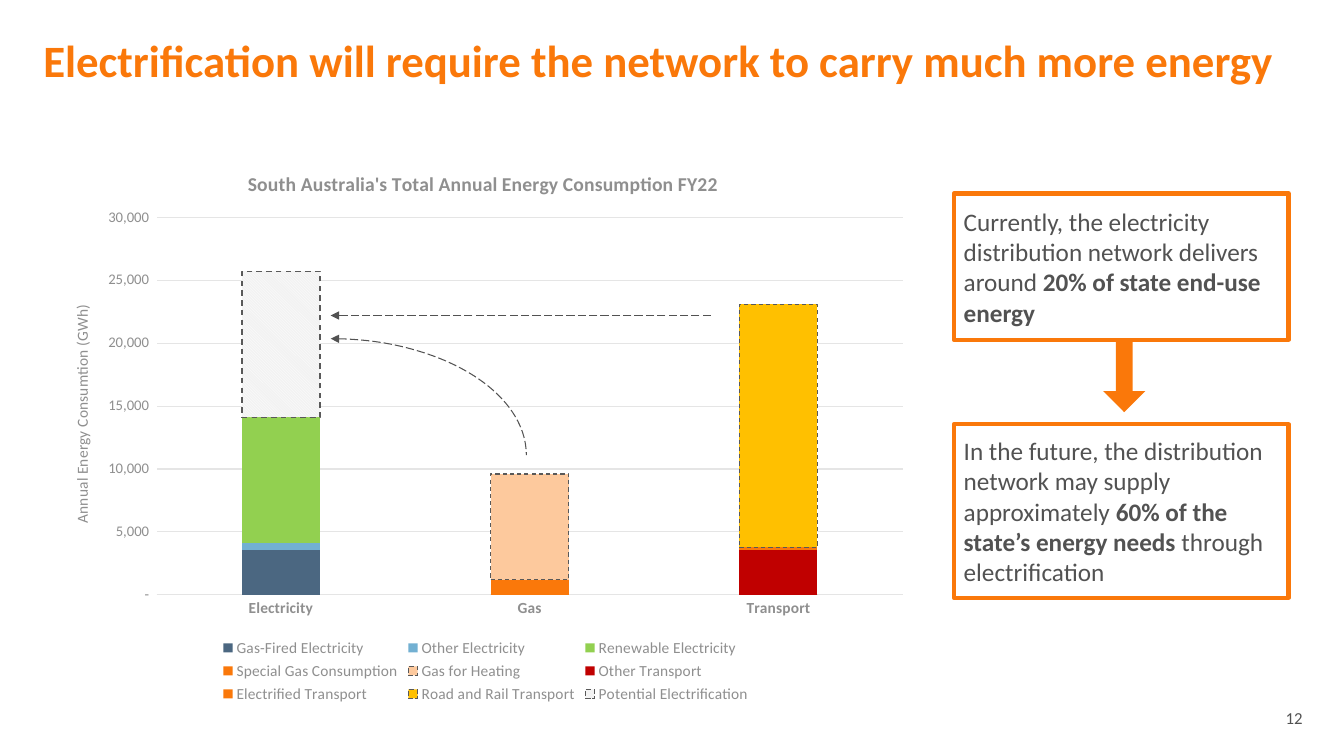
from lxml import etree
from pptx import Presentation
from pptx.chart.data import CategoryChartData
from pptx.dml.color import RGBColor
from pptx.enum.chart import XL_CHART_TYPE, XL_LEGEND_POSITION, XL_TICK_MARK
from pptx.enum.dml import MSO_LINE, MSO_PATTERN
from pptx.enum.shapes import MSO_CONNECTOR, MSO_SHAPE
from pptx.enum.text import MSO_ANCHOR, PP_ALIGN
from pptx.oxml.ns import qn
from pptx.util import Inches, Pt

ORANGE = RGBColor(0xFA, 0x78, 0x0A)
DARK = RGBColor(0x52, 0x52, 0x52)
GREY = RGBColor(0x8F, 0x8F, 0x8F)
GRID = RGBColor(0xE5, 0xE5, 0xE5)
DASH = RGBColor(0x59, 0x59, 0x59)
WHITE = RGBColor(0xFF, 0xFF, 0xFF)
PALE = RGBColor(0xF2, 0xF2, 0xF2)
SLATE = RGBColor(0x4B, 0x67, 0x81)
BLUE = RGBColor(0x72, 0xB0, 0xD2)
GREEN = RGBColor(0x92, 0xD0, 0x50)
PEACH = RGBColor(0xFD, 0xC9, 0x9D)
RED = RGBColor(0xC0, 0x00, 0x00)
YELLOW = RGBColor(0xFF, 0xC0, 0x00)


def set_font(font, size, color, bold=False):
    for key, value in {"name": "Calibri", "size": Pt(size), "bold": bold}.items():
        setattr(font, key, value)
    font.color.rgb = color


def set_layout(parent, index, values):
    for old in parent.findall(qn("c:layout")):
        parent.remove(old)
    layout = etree.Element(qn("c:layout"))
    manual = etree.SubElement(layout, qn("c:manualLayout"))
    if index == 0:
        etree.SubElement(manual, qn("c:layoutTarget")).set("val", "inner")
    for tag in ("xMode", "yMode"):
        etree.SubElement(manual, qn("c:" + tag)).set("val", "edge")
    for tag, value in zip("xywh", values):
        etree.SubElement(manual, qn("c:" + tag)).set("val", str(value))
    parent.insert(index, layout)


prs = Presentation()
prs.slide_width, prs.slide_height = Inches(13.33), Inches(7.5)
s = prs.slides.add_slide(prs.slide_layouts[5])

title = s.shapes.title
title.left, title.top, title.width, title.height = [Inches(v) for v in (0.43, 0.43, 12.59, 0.97)]
tf = title.text_frame
tf.margin_left = tf.margin_right = tf.margin_top = tf.margin_bottom = 0
tf.vertical_anchor = MSO_ANCHOR.TOP
p = tf.paragraphs[0]
p.alignment = PP_ALIGN.LEFT
p.line_spacing = Pt(31)
r = p.add_run()
r.text = "Electrification will require the network to carry much more energy"
set_font(r.font, 32, ORANGE, True)

series = [
    ("Gas-Fired Electricity", 0, 3600, SLATE, None),
    ("Other Electricity", 0, 500, BLUE, None),
    ("Renewable Electricity", 0, 10000, GREEN, None),
    ("Special Gas Consumption", 1, 1200, ORANGE, None),
    ("Gas for Heating", 1, 8400, PEACH, 0.75),
    ("Other Transport", 2, 3600, RED, None),
    ("Electrified Transport", 2, 200, ORANGE, None),
    ("Road and Rail Transport", 2, 19300, YELLOW, 0.75),
    ("Potential Electrification", 0, 11600, None, 1),
]
data = CategoryChartData(number_format="#,##0")
data.categories = ["Electricity", "Gas", "Transport"]
for name, column, value, color, width in series:
    data.add_series(name, [value if i == column else 0 for i in range(3)])
chart = s.shapes.add_chart(XL_CHART_TYPE.COLUMN_STACKED, Inches(0.42), Inches(1.43),
                           Inches(8.71), Inches(5.59), data).chart
set_font(chart.font, 11, GREY)
plot = chart.plots[0]
plot.gap_width, plot.overlap, plot.vary_by_categories = 219, 100, False
for ser, (name, column, value, color, width) in zip(plot.series, series):
    fill = ser.format.fill
    if color is None:
        fill.patterned()
        fill.pattern = MSO_PATTERN.LIGHT_DOWNWARD_DIAGONAL
        fill.fore_color.rgb, fill.back_color.rgb = WHITE, PALE
    else:
        fill.solid()
        fill.fore_color.rgb = color
    line = ser.format.line
    if width:
        line.color.rgb = DASH
        line.width = Pt(width)
        line.dash_style = MSO_LINE.DASH
    else:
        line.fill.background()

cat, val = chart.category_axis, chart.value_axis
for axis, size, bold in ((cat, 11, True), (val, 10.5, False)):
    axis.major_tick_mark = axis.minor_tick_mark = XL_TICK_MARK.NONE
    set_font(axis.tick_labels.font, size, GREY, bold)
val.minimum_scale, val.maximum_scale, val.major_unit = 0, 30000, 5000
val.tick_labels.number_format = '#,##0_);(#,##0);"-"_)'
val.tick_labels.number_format_is_linked = False
val.format.line.fill.background()
for line in (cat.format.line, val.major_gridlines.format.line):
    line.color.rgb = GRID
    line.width = Pt(0.75)

for heading, text, size, bold, spot in (
    (chart.chart_title, "South Australia's Total Annual Energy Consumption FY22", 14, True, (0.23, 0.04)),
    (val.axis_title, "Annual Energy Consumtion (GWh)", 11, False, (0.03, 0.28)),
):
    tf = heading.text_frame
    r = tf.paragraphs[0].add_run()
    r.text = text
    set_font(r.font, size, GREY, bold)
    set_layout(heading._element, 1, spot)
tf._txBody.find(qn("a:bodyPr")).set("rot", "-5400000")

chart.has_legend = True
legend = chart.legend
legend.position = XL_LEGEND_POSITION.BOTTOM
legend.include_in_layout = False
set_font(legend.font, 11, GREY)
set_layout(legend._element, 1, (0.2, 0.87, 0.61, 0.13))
set_layout(plot._element.getparent(), 0, (0.13, 0.13, 0.85, 0.67))

down = s.shapes.add_shape(MSO_SHAPE.DOWN_ARROW, Inches(10.94), Inches(3.36), Inches(0.42), Inches(0.73))
down.adjustments[0] = 0.4
down.shadow.inherit = False
down.fill.solid()
down.fill.fore_color.rgb = ORANGE
down.line.fill.background()

arc = s.shapes.add_shape(MSO_SHAPE.ARC, Inches(1.34), Inches(3.36), Inches(3.88), Inches(2.31))
arc.shadow.inherit = False
arc.fill.background()
arrow = s.shapes.add_connector(MSO_CONNECTOR.STRAIGHT, Inches(7.05), Inches(3.13), Inches(3.28), Inches(3.13))
etree.SubElement(arrow._element.spPr, qn("a:effectLst"))
for shape, end in ((arc, "a:headEnd"), (arrow, "a:tailEnd")):
    shape.line.color.rgb = DARK
    shape.line.width = Pt(0.75)
    shape.line.dash_style = MSO_LINE.LONG_DASH
    etree.SubElement(shape.line._get_or_add_ln(), qn(end)).set("type", "triangle")

boxes = [
    (1.92, 1.45, [("Currently, the electricity distribution network delivers around ", False),
                  ("20% of state end-use energy", True)]),
    (4.21, 1.72, [("In the future, the distribution network may supply approximately ", False),
                  ("60% of the state’s energy needs ", True),
                  ("through electrification", False)]),
]
for top, height, runs in boxes:
    box = s.shapes.add_shape(MSO_SHAPE.RECTANGLE, Inches(9.46), Inches(top), Inches(3.32), Inches(height))
    box.shadow.inherit = False
    box.fill.background()
    box.line.color.rgb = ORANGE
    box.line.width = Pt(3)
    tf = box.text_frame
    tf.word_wrap = True
    tf.vertical_anchor = MSO_ANCHOR.MIDDLE
    p = tf.paragraphs[0]
    p.alignment = PP_ALIGN.LEFT
    for text, bold in runs:
        r = p.add_run()
        r.text = text
        set_font(r.font, 18, DARK, bold)

number = s.shapes.add_textbox(Inches(12.36), Inches(7.02), Inches(0.56), Inches(0.4))
tf = number.text_frame
tf.word_wrap = True
tf.margin_left = tf.margin_right = tf.margin_top = tf.margin_bottom = 0
p = tf.paragraphs[0]
p.alignment = PP_ALIGN.RIGHT
r = p.add_run()
r.text = "12"
set_font(r.font, 12, DARK)

prs.save("out.pptx")
